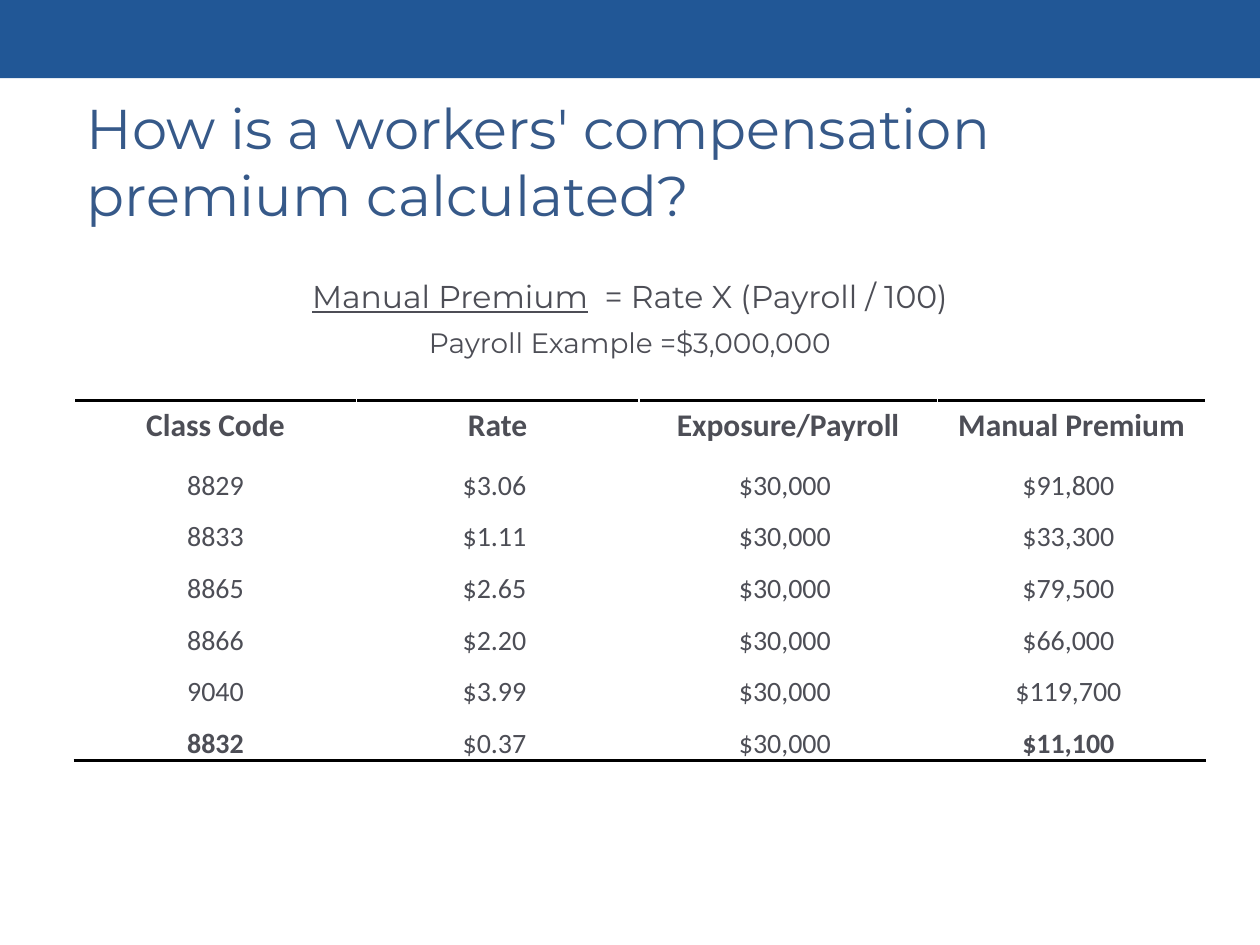
"""Build the slide that explains how a workers' compensation premium is calculated."""
from lxml import etree
from pptx import Presentation
from pptx import util as u
from pptx.dml.color import RGBColor
from pptx.enum import shapes, text
from pptx.oxml import ns

BAR_BLUE = RGBColor(0x00, 0x3F, 0x87)
TITLE_BLUE = RGBColor(0x36, 0x59, 0x89)
GREY = RGBColor(0x4D, 0x4E, 0x56)
WHITE = RGBColor(0xFF, 0xFF, 0xFF)
BLACK = RGBColor(0x00, 0x00, 0x00)


def style(paragraph, name, size, color, bold=False):
    for run in paragraph.runs:
        run.font.name = name
        run.font.size = u.Pt(size)
        run.font.color.rgb = color
        run.font.bold = bold


def add_border(cell, side):
    line = etree.Element(ns.qn(f"a:{side}"), w=str(u.Pt(2)))
    fill = etree.SubElement(line, ns.qn("a:solidFill"))
    etree.SubElement(fill, ns.qn("a:srgbClr"), val=str(BLACK))
    cell._tc.get_or_add_tcPr().insert(0, line)


presentation = Presentation()
presentation.slide_width, presentation.slide_height = u.Inches(10), u.Inches(7.5)
width = presentation.slide_width
left, content_width = u.Inches(0.59), u.Inches(8.98)
slide = presentation.slides.add_slide(presentation.slide_layouts[5])

bar = slide.shapes.add_shape(shapes.MSO_SHAPE.RECTANGLE, 0, 0, width, u.Inches(0.62))
bar.shadow.inherit = False
bar.fill.solid()
bar.fill.fore_color.rgb = BAR_BLUE
bar.line.fill.background()
bar_color = bar._element.spPr.find(".//" + ns.qn("a:srgbClr"))
etree.SubElement(bar_color, ns.qn("a:alpha"), val="87000")

title = slide.shapes.title
title.left, title.top = left, u.Inches(0.69)
title.width, title.height = content_width, u.Inches(1.09)
title.text_frame.text = "How is a workers' compensation premium calculated?"
title.text_frame.auto_size = text.MSO_AUTO_SIZE.NONE
title.text_frame.vertical_anchor = text.MSO_ANCHOR.TOP
title.text_frame.paragraphs[0].alignment = text.PP_ALIGN.LEFT
style(title.text_frame.paragraphs[0], "Montserrat", 32, TITLE_BLUE)

margin = u.Inches(0.63)
formula = slide.shapes.add_textbox(margin, u.Inches(1.76), width - 2 * margin, u.Inches(1.09))
frame = formula.text_frame
frame.word_wrap = True
frame.vertical_anchor = text.MSO_ANCHOR.BOTTOM
frame.margin_bottom = 0
definition, example = frame.paragraphs[0], frame.add_paragraph()
for part in ("Manual Premium", "  = Rate X (Payroll / 100)"):
    definition.add_run().text = part
definition.runs[0].font.underline = True
example.text = "Payroll Example =$3,000,000"
example.space_before = u.Pt(10)
for paragraph, size in ((definition, 18), (example, 16)):
    paragraph.alignment = text.PP_ALIGN.CENTER
    paragraph.line_spacing = 0.8
    style(paragraph, "Montserrat", size, GREY)

exposure = 30000
rates = {"8829": 3.06, "8833": 1.11, "8865": 2.65, "8866": 2.20, "9040": 3.99, "8832": 0.37}
rows = [("Class Code", "Rate", "Exposure/Payroll", "Manual Premium")]
for code, rate in rates.items():
    rows.append((code, f"${rate:.2f} ", f"${exposure:,} ", f"${rate * exposure:,.0f} "))
last = len(rows) - 1

table = slide.shapes.add_table(len(rows), 4, left, u.Inches(3.18), content_width, u.Inches(2.83)).table
table.first_row = table.horz_banding = False
for column, column_width in zip(table.columns, (2.24, 2.24, 2.37, 2.13)):
    column.width = u.Inches(column_width)
for row_index, values in enumerate(rows):
    header = row_index == 0
    table.rows[row_index].height = u.Inches(0.38 if header else 0.41)
    for column_index, value in enumerate(values):
        cell = table.cell(row_index, column_index)
        cell.text = value
        cell.fill.solid()
        cell.fill.fore_color.rgb = WHITE
        cell.vertical_anchor = text.MSO_ANCHOR.MIDDLE if header else text.MSO_ANCHOR.BOTTOM
        if not header:
            cell.margin_left = cell.margin_right = cell.margin_top = u.Inches(0.01)
            cell.margin_bottom = 0
        paragraph = cell.text_frame.paragraphs[0]
        paragraph.alignment = text.PP_ALIGN.CENTER
        bold = header or (row_index == last and column_index in (0, 3))
        style(paragraph, "Calibri", 18 if header else 16, GREY, bold)
        if header:
            add_border(cell, "lnT")
        elif row_index == last:
            add_border(cell, "lnB")

presentation.save("out.pptx")
